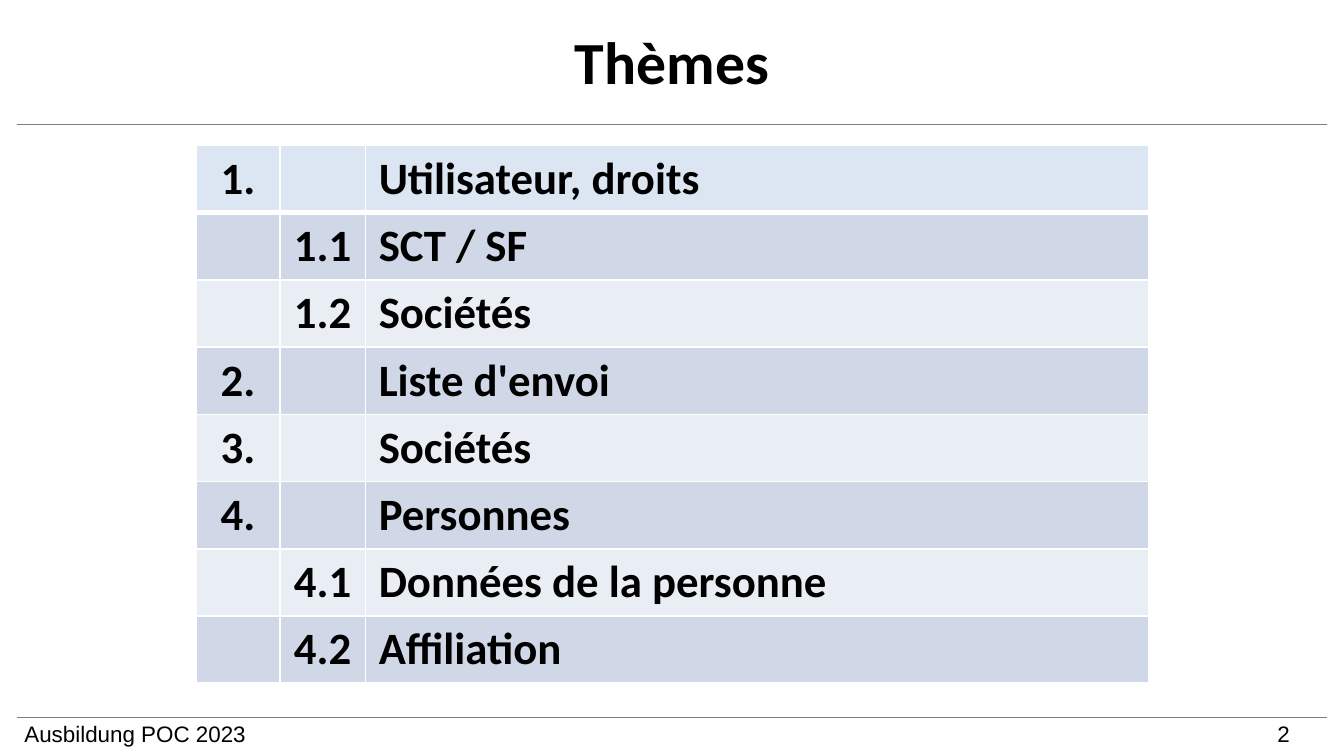
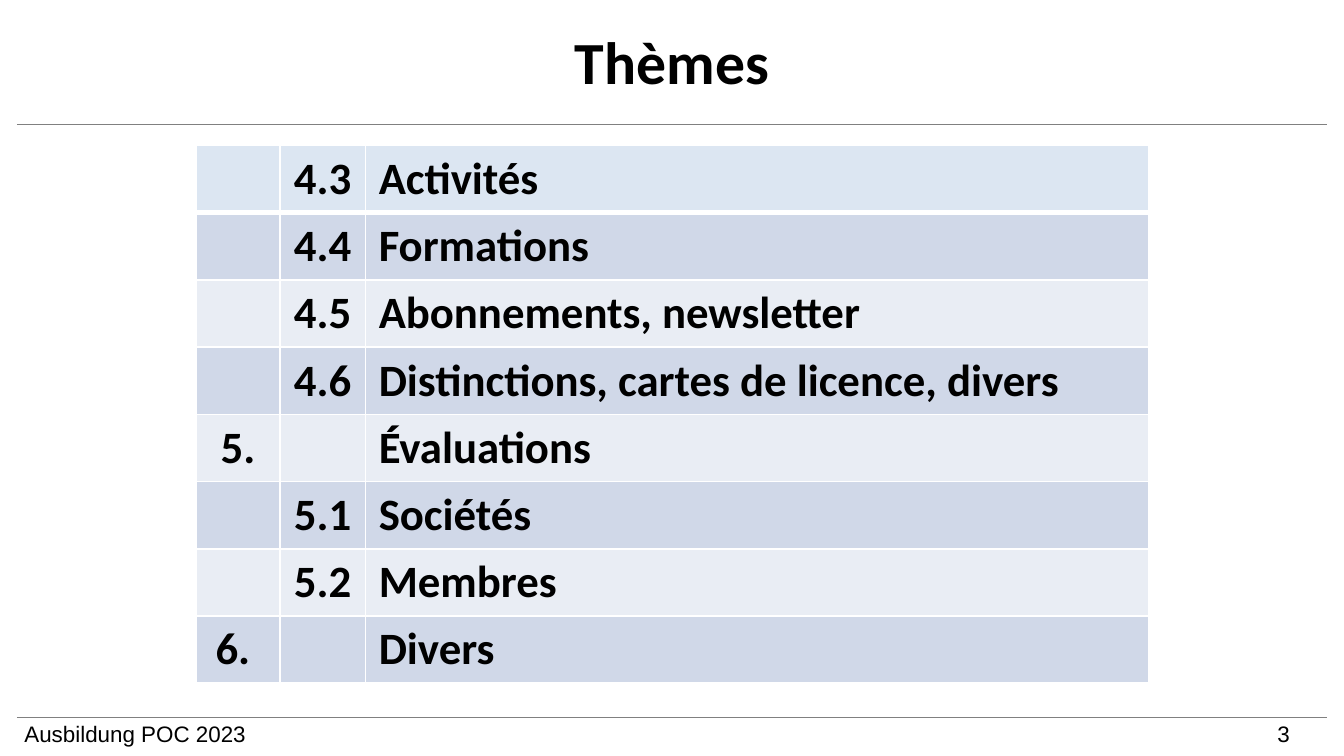
from dataclasses import dataclass
from typing import Optional

from lxml.etree import SubElement
from pptx import Presentation
from pptx.dml.color import RGBColor
from pptx.enum.shapes import MSO_CONNECTOR
from pptx.enum.text import MSO_ANCHOR, MSO_AUTO_SIZE, PP_ALIGN
from pptx.oxml import parse_xml
from pptx.oxml.ns import nsdecls, qn
from pptx.util import Emu, Pt

BLACK = RGBColor(0x00, 0x00, 0x00)
RULE_GREY = RGBColor(0x80, 0x80, 0x80)
BORDER_WHITE = RGBColor(0xFF, 0xFF, 0xFF)
HEADER_BLUE = RGBColor(0xDC, 0xE6, 0xF2)
BAND_FILLS = (RGBColor(0xE9, 0xED, 0xF4), RGBColor(0xD0, 0xD8, 0xE8))

EMU_PER_PX = 9525
PAGE_WIDTH, PAGE_HEIGHT = 960, 540
RULE_MARGIN = 12
RULE_TOPS = (512, 89)
COLUMN_WIDTHS = (60, 61, 560)
NUMBER_COLUMNS = 2
ROW_HEIGHT = 48
CELL_PADDING = 4
FOOTER_TEXT = "Ausbildung POC 2023"
TITLE_TEXT = "Thèmes"


@dataclass(frozen=True)
class Frame:
    left: int
    top: int
    width: int
    height: int


@dataclass(frozen=True)
class Topic:
    number: str
    label: str

    def cells(self) -> tuple[str, str, str]:
        """Chapters are numbered in the first column, sections in the second."""
        if self.number.strip().endswith("."):
            return self.number, "", self.label
        return "", self.number, self.label


TITLE_FRAME = Frame(238, 13, 484, 61)
TABLE_FRAME = Frame(140, 104, sum(COLUMN_WIDTHS), 8 * ROW_HEIGHT)
FOOTER_FRAME = Frame(8, 510, 179, 29)
NUMBER_FRAME = Frame(903, 510, 51, 29)

FIRST_PAGE_NUMBER = 2
PAGES = (
    (
        Topic("1.", "Utilisateur, droits"),
        Topic("1.1", "SCT / SF"),
        Topic("1.2", "Sociétés"),
        Topic("2.", "Liste d'envoi"),
        Topic("3.", "Sociétés"),
        Topic("4.", "Personnes"),
        Topic("4.1", "Données de la personne"),
        Topic("4.2", "Affiliation"),
    ),
    (
        Topic("4.3", "Activités"),
        Topic("4.4", "Formations"),
        Topic("4.5", "Abonnements, newsletter"),
        Topic("4.6", "Distinctions, cartes de licence, divers"),
        Topic("5.", "Évaluations"),
        Topic("5.1", "Sociétés"),
        Topic("5.2", "Membres"),
        Topic("6. ", "Divers"),
    ),
)


def px(length: int) -> Emu:
    return Emu(length * EMU_PER_PX)


def place(frame: Frame) -> tuple[Emu, Emu, Emu, Emu]:
    return px(frame.left), px(frame.top), px(frame.width), px(frame.height)


def style_paragraph(para, font_name: str, size: int, bold: bool = False,
                    align: Optional[PP_ALIGN] = None) -> None:
    para.alignment = align
    para.font.name = font_name
    para.font.size = Pt(size)
    para.font.bold = bold
    para.font.color.rgb = BLACK


def add_rule(page, top: int) -> None:
    rule = page.shapes.add_connector(
        MSO_CONNECTOR.STRAIGHT,
        px(RULE_MARGIN), px(top), px(PAGE_WIDTH - RULE_MARGIN), px(top))
    rule.line.color.rgb = RULE_GREY
    rule.line.width = Pt(0.25)
    SubElement(rule._element.spPr, qn("a:effectLst"))


def add_footer_box(page, frame: Frame):
    """Add an empty footer text box and return its paragraph."""
    box = page.shapes.add_textbox(*place(frame))
    box.text_frame.word_wrap = False
    box.text_frame.auto_size = MSO_AUTO_SIZE.SHAPE_TO_FIT_TEXT
    para = box.text_frame.paragraphs[0]
    style_paragraph(para, "Arial", 12)
    return para


def add_footer(page, number: int) -> None:
    add_footer_box(page, FOOTER_FRAME).add_run().text = FOOTER_TEXT
    field = parse_xml(
        f'<a:fld {nsdecls("a")} id="{{B6F15528-21DE-4FAA-801E-634DDDAF4B2B}}" '
        f'type="slidenum"><a:rPr lang="fr-CH" sz="1200">'
        f'<a:latin typeface="Arial"/></a:rPr><a:t>{number}</a:t></a:fld>')
    add_footer_box(page, NUMBER_FRAME)._p.append(field)


def set_title(page) -> None:
    title = page.shapes.title
    title.left, title.top, title.width, title.height = place(TITLE_FRAME)
    title.text_frame.text = TITLE_TEXT
    title.text_frame.word_wrap = True
    title.text_frame.auto_size = MSO_AUTO_SIZE.SHAPE_TO_FIT_TEXT
    style_paragraph(title.text_frame.paragraphs[0], "Calibri", 32, True,
                    PP_ALIGN.CENTER)


def set_borders(cell, top: int, bottom: int) -> None:
    """Draw white borders, with top and bottom widths in points."""
    properties = cell._tc.get_or_add_tcPr()
    for side, width in (("L", 1), ("R", 1), ("T", top), ("B", bottom)):
        properties.append(parse_xml(
            f'<a:ln{side} {nsdecls("a")} w="{Pt(width)}"><a:solidFill>'
            f'<a:srgbClr val="{BORDER_WHITE}"/></a:solidFill></a:ln{side}>'))


def add_topic_table(page, topics: tuple[Topic, ...]) -> None:
    table = page.shapes.add_table(
        len(topics), len(COLUMN_WIDTHS), *place(TABLE_FRAME)).table
    for column, width in zip(table.columns, COLUMN_WIDTHS):
        column.width = px(width)
    for row_index, topic in enumerate(topics):
        table.rows[row_index].height = px(ROW_HEIGHT)
        fill = BAND_FILLS[row_index % 2] if row_index else HEADER_BLUE
        for column_index, text in enumerate(topic.cells()):
            cell = table.cell(row_index, column_index)
            cell.margin_top = cell.margin_bottom = px(CELL_PADDING)
            cell.vertical_anchor = MSO_ANCHOR.MIDDLE
            set_borders(cell, top=3 if row_index == 1 else 1,
                        bottom=3 if row_index == 0 else 1)
            cell.fill.solid()
            cell.fill.fore_color.rgb = fill
            align = None
            if column_index < NUMBER_COLUMNS:
                align = PP_ALIGN.CENTER
                cell.margin_left = cell.margin_right = px(CELL_PADDING)
            if text:
                cell.text = text
                style_paragraph(cell.text_frame.paragraphs[0], "Calibri", 24,
                                True, align)


def main() -> None:
    deck = Presentation()
    deck.slide_width, deck.slide_height = px(PAGE_WIDTH), px(PAGE_HEIGHT)
    deck.element.set("firstSlideNum", str(FIRST_PAGE_NUMBER))
    title_only = deck.slide_layouts[5]
    for number, topics in enumerate(PAGES, FIRST_PAGE_NUMBER):
        page = deck.slides.add_slide(title_only)
        add_footer(page, number)
        for top in RULE_TOPS:
            add_rule(page, top)
        set_title(page)
        add_topic_table(page, topics)
    deck.save("out.pptx")


if __name__ == "__main__":
    main()
